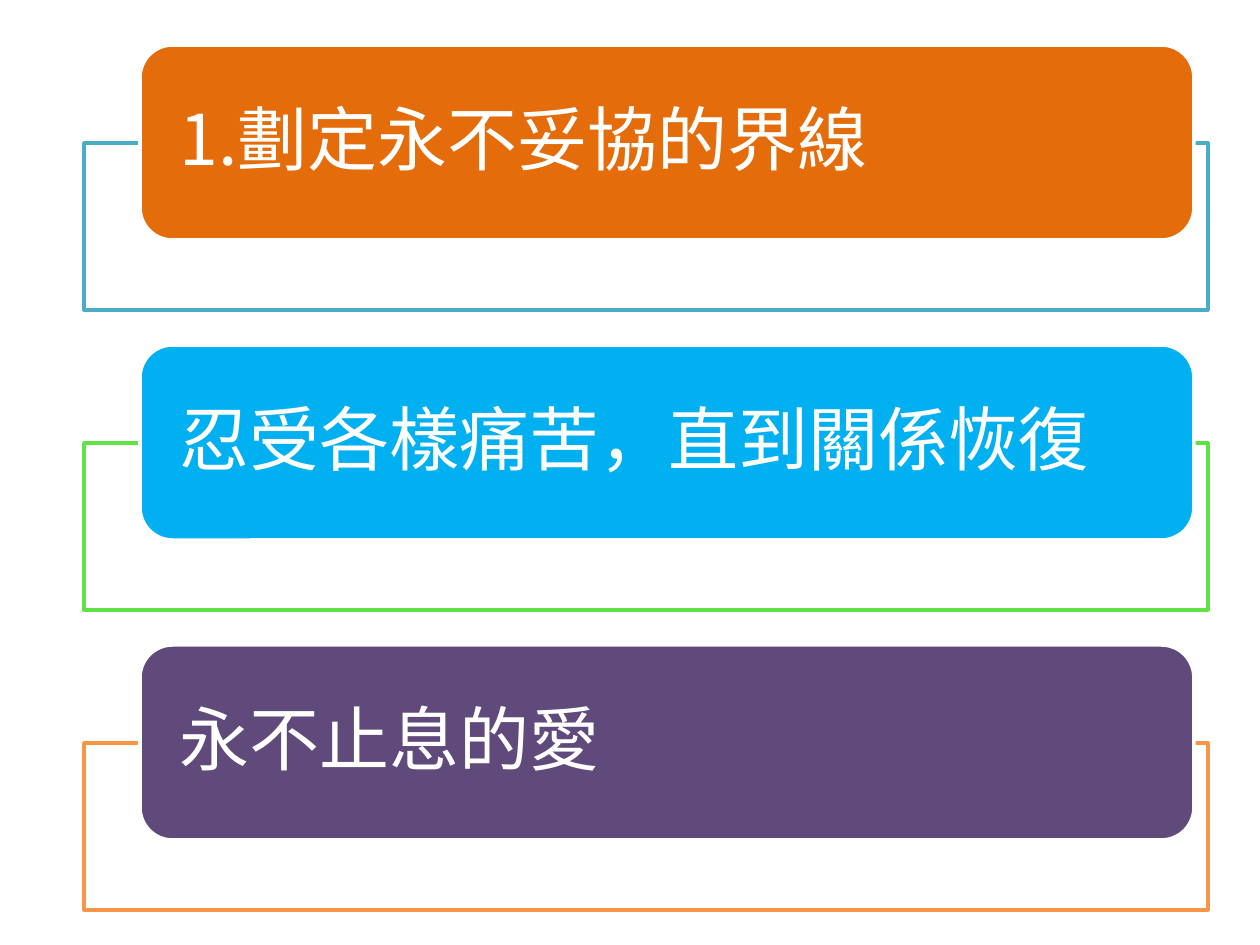
from lxml import etree
from pptx import Presentation
from pptx.dml.color import RGBColor
from pptx.enum.shapes import MSO_SHAPE
from pptx.enum.text import MSO_ANCHOR, PP_ALIGN
from pptx.oxml.ns import qn
from pptx.util import Pt

PX = 914400 // 126
RECTANGLE = MSO_SHAPE.RECTANGLE
ROUNDED = MSO_SHAPE.ROUNDED_RECTANGLE
MIDDLE = MSO_ANCHOR.MIDDLE
LEFT = PP_ALIGN.LEFT
FONT = "Noto Sans CJK TC"
WHITE = "FFFFFF"

# Text, card colour, frame colour
POINTS = [
    ("1.劃定永不妥協的界線", "E46C0A", "4BACC6"),
    ("忍受各樣痛苦，直到關係恢復", "00B0F0", "60E146"),
    ("永不止息的愛", "604A7B", "F79646"),
]
FIRST_TOP, PITCH, FRAME_DROP = 45, 300, 98


def add_block(kind, left, top, width, height, fill, line):
    block = slide.shapes.add_shape(kind, left * PX, top * PX, width * PX, height * PX)
    block.shadow.inherit = False
    block.fill.solid()
    block.fill.fore_color.rgb = RGBColor.from_string(fill)
    block.line.color.rgb = RGBColor.from_string(line)
    block.line.width = Pt(2)
    return block


def write_text(block, text, size=40, color=WHITE, inset=30):
    frame = block.text_frame
    frame.word_wrap = True
    frame.vertical_anchor = MIDDLE
    frame.margin_left = frame.margin_right = inset * PX
    frame.margin_top = frame.margin_bottom = 0
    para = frame.paragraphs[0]
    para.alignment = LEFT
    para.line_spacing = 0.9
    span = para.add_run()
    span.text = text
    span.font.size = Pt(size)
    span.font.name = FONT
    span.font.color.rgb = RGBColor.from_string(color)
    # East Asian typeface for the Chinese characters
    etree.SubElement(span.font._element, qn("a:ea"), typeface=FONT)


deck = Presentation()
deck.slide_width = 1260 * PX
deck.slide_height = 945 * PX
slide = deck.slides.add_slide(deck.slide_layouts[6])

for index, (text, card_color, frame_color) in enumerate(POINTS):
    top = FIRST_TOP + index * PITCH

    # Outlined frame behind, slightly see-through
    outline = add_block(RECTANGLE, 84, top + FRAME_DROP, 1124, 167, WHITE, frame_color)
    fill_color = outline.fill._xPr.find(qn("a:solidFill"))[0]
    etree.SubElement(fill_color, qn("a:alpha"), val="90000")

    # Rounded card with the point
    card = add_block(ROUNDED, 140, top, 1054, 195, card_color, WHITE)
    write_text(card, text)

deck.save("out.pptx")
